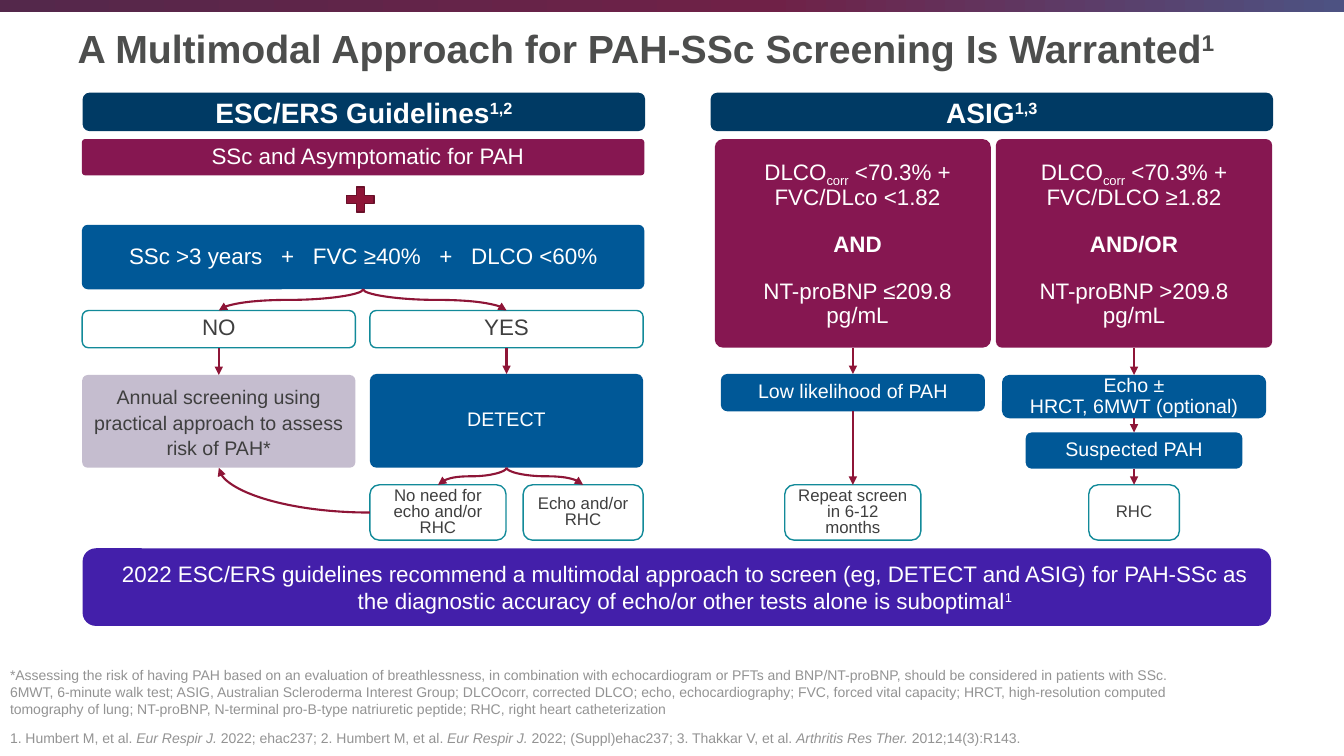
from copy import deepcopy

from lxml.etree import SubElement
from pptx import Presentation
from pptx.dml.color import RGBColor
from pptx.enum.shapes import MSO_CONNECTOR, MSO_SHAPE
from pptx.enum.text import MSO_ANCHOR, PP_ALIGN
from pptx.oxml.ns import qn
from pptx.util import Inches, Pt

WHITE = RGBColor(0xFF, 0xFF, 0xFF)
TITLE_GRAY = RGBColor(0x4D, 0x4E, 0x4D)
TEXT_GRAY = RGBColor(0x3F, 0x3F, 0x3F)
NOTE_GRAY = RGBColor(0x93, 0x93, 0x93)
NAVY = RGBColor(0x00, 0x3A, 0x64)
BLUE = RGBColor(0x00, 0x58, 0x97)
PLUM = RGBColor(0x86, 0x17, 0x51)
LILAC = RGBColor(0xC5, 0xBD, 0xCF)
VIOLET = RGBColor(0x43, 0x1F, 0xAA)
TEAL = RGBColor(0x12, 0x8A, 0x99)
CRIMSON = RGBColor(0x8E, 0x15, 0x37)
DARK_RED = RGBColor(0x69, 0x10, 0x29)
BAND = [(0, RGBColor(0x54, 0x28, 0x4B)), (0.57, RGBColor(0x6F, 0x21, 0x47)), (1, RGBColor(0x4D, 0x52, 0x82))]
SUPER, SUB, WIDE = {"baseline": "30000"}, {"baseline": "-25000"}, {"spc": "890"}
BOLD, ITALIC = {"b": "1"}, {"i": "1"}


class Sheet:
    font = "Arial"

    def __init__(self, deck):
        self.shapes = deck.slides.add_slide(deck.slide_layouts[6]).shapes
        self.column, self.row = deck.slide_width / 100, deck.slide_height / 100

    def cols(self, count):
        return round(count * self.column)

    def rows(self, count):
        return round(count * self.row)

    def frame(self, center, top, width, height):
        return self.cols(center - width / 2), self.rows(top), self.cols(width), self.rows(height)

    def put_text(self, frame, paragraphs, size, color, align=PP_ALIGN.CENTER, spacing=1.0, gap=0, indent=0):
        frame.word_wrap = True
        for index, runs in enumerate(paragraphs):
            paragraph = frame.add_paragraph() if index else frame.paragraphs[0]
            paragraph.alignment, paragraph.line_spacing = align, spacing
            paragraph.space_before = Pt(gap if index else 0)
            if indent:
                paragraph._p.get_or_add_pPr().set("marL", str(self.cols(indent)))
            for part in runs:
                text, extras = (part, {}) if isinstance(part, str) else part
                run = paragraph.add_run()
                run.text = text
                run.font.name, run.font.size = self.font, Pt(size)
                run.font.color.rgb = color
                for key, value in extras.items():
                    run._r.get_or_add_rPr().set(key, value)

    def preset(self, kind, place, fill=None, outline=None):
        shape = self.shapes.add_shape(kind, *self.frame(*place))
        shape.shadow.inherit = False
        if fill is None:
            shape.fill.background()
        else:
            shape.fill.solid()
            shape.fill.fore_color.rgb = fill
        if outline is None:
            shape.line.fill.background()
        else:
            shape.line.color.rgb = outline
            shape.line.width = Pt(1)
        return shape

    def box(self, place, paragraphs, size, fill=None, color=WHITE, corner=0.17, **style):
        shape = self.preset(MSO_SHAPE.ROUNDED_RECTANGLE, place, fill, TEAL if fill is None else None)
        shape.adjustments[0] = corner
        frame = shape.text_frame
        frame.vertical_anchor = MSO_ANCHOR.MIDDLE
        frame.margin_left = frame.margin_right = self.cols(0.75)
        frame.margin_top = frame.margin_bottom = self.rows(0.15)
        self.put_text(frame, paragraphs, size, color, **style)
        return shape

    def answer(self, place, text, size=12):
        return self.box(place, [[text]], size, color=TEXT_GRAY, spacing=0.8)

    def label(self, place, paragraphs, size, color, anchor):
        frame = self.shapes.add_textbox(*self.frame(*place)).text_frame
        frame.vertical_anchor = anchor
        self.put_text(frame, paragraphs, size, color, PP_ALIGN.LEFT)

    def band(self, place):
        shape = self.preset(MSO_SHAPE.RECTANGLE, place)
        shape.fill.gradient()
        shape.fill.gradient_angle = 0
        stops = shape._element.spPr.find(".//" + qn("a:gsLst"))
        stops.insert(1, deepcopy(stops[0]))
        for stop, (position, color) in zip(shape.fill.gradient_stops, BAND):
            stop.position, stop.color.rgb = position, color

    def arrow(self, source, target, kind=MSO_CONNECTOR.STRAIGHT, sides=(2, 0)):
        line = self.shapes.add_connector(kind, 0, 0, 0, 0)
        line.begin_connect(source, sides[0])
        line.end_connect(target, sides[1])
        line.line.color.rgb = CRIMSON
        line.line.width = Pt(1.5)
        properties = line._element.spPr
        SubElement(properties.find(qn("a:ln")), qn("a:tailEnd"), type="triangle")
        SubElement(properties, qn("a:effectLst"))
        return line

    def turn(self, line, degrees, flip="0"):
        xfrm = line._element.spPr.find(qn("a:xfrm"))
        for key, value in (("rot", str(degrees * 60000)), ("flipH", flip), ("flipV", "0")):
            xfrm.set(key, value)

    def branch(self, source, target):
        line = self.arrow(source, target, MSO_CONNECTOR.CURVE)
        rightward = line.end_x > line.begin_x
        across, down = line.width, line.height
        line.left += (across - down) // 2
        line.top += (down - across) // 2
        line.width, line.height = down, across
        self.turn(line, *((270, "1") if rightward else (90, "0")))

    def loop_back(self, source, target):
        line = self.arrow(source, target, MSO_CONNECTOR.CURVE, (1, 2))
        line._element.spPr.find(qn("a:prstGeom")).set("prst", "curvedConnector2")
        self.turn(line, 180)


def build_guidelines(sheet):
    middle, no_side, yes_side = 27.02, 16.28, 37.69
    sheet.box((middle, 18.4, 41.85, 4.8), [["SSc and Asymptomatic for PAH"]],
              16, PLUM, corner=0.09, spacing=0.9, indent=0.7)
    sheet.preset(MSO_SHAPE.MATH_PLUS, (26.81, 24.13, 2.78, 4.53), CRIMSON, DARK_RED)
    plus = [(" ", WIDE), "+", (" ", WIDE)]
    criteria = sheet.box((middle, 29.73, 41.85, 8.53), [["SSc >3 years", *plus, "FVC ≥40%", *plus, "DLCO <60%"]],
                         16, BLUE, corner=0.09, spacing=0.9)
    no = sheet.answer((no_side, 41.07, 20.33, 4.93), "NO", 16)
    yes = sheet.answer((yes_side, 41.07, 20.33, 4.93), "YES", 16)
    annual = sheet.box((no_side, 49.6, 20.33, 12.27),
                       [["Annual screening using practical approach to assess risk of PAH*"]],
                       14, LILAC, TEXT_GRAY, corner=0.06, spacing=Pt(18))
    detect = sheet.box((yes_side, 49.47, 20.33, 12.4), [["DETECT"]], 14, BLUE, corner=0.07, spacing=0.8)
    no_need = sheet.answer((32.59, 64.13, 10.13, 7.33), "No need for echo and/or RHC")
    echo = sheet.answer((43.39, 64.13, 8.93, 7.33), "Echo and/or RHC")
    for source, target in ((criteria, no), (criteria, yes), (detect, no_need), (detect, echo)):
        sheet.branch(source, target)
    sheet.arrow(no, annual)
    sheet.arrow(yes, detect)
    sheet.loop_back(no_need, annual)


def build_asig(sheet):
    low_side, high_side = 63.46, 84.38
    panels = [sheet.box((center, 18.4, 20.55, 27.6),
                        [["DLCO", ("corr", SUB), ratio], [(joint, BOLD)], [f"NT-proBNP {level}209.8 pg/mL"]],
                        16, PLUM, corner=corner, spacing=0.9, gap=16.5, indent=indent)
              for center, ratio, joint, level, corner, indent in (
                  (low_side, " <70.3% + FVC/DLco <1.82", "AND", "≤", 0.04, 0.7),
                  (high_side, " <70.3% + FVC/DLCO ≥1.82", "AND/OR", ">", 0.03, 0))]
    low, echo, suspected = [sheet.box(place, lines, 14, BLUE, spacing=0.9) for place, lines in (
        ((low_side, 49.47, 19.65, 4.93), [["Low likelihood of PAH"]]),
        ((high_side, 49.6, 19.65, 5.73), [["Echo ±"], ["HRCT, 6MWT (optional)"]]),
        ((high_side, 57.2, 16.13, 4.8), [["Suspected PAH"]]))]
    repeat = sheet.answer((low_side, 64.13, 10.13, 7.33), "Repeat screen in 6-12 months")
    rhc = sheet.answer((high_side, 64.13, 6.75, 7.33), "RHC")
    for chain in ((panels[0], low, repeat), (panels[1], echo, suspected, rhc)):
        for source, target in zip(chain, chain[1:]):
            sheet.arrow(source, target)


def main():
    deck = Presentation()
    deck.slide_width, deck.slide_height = Inches(13.33), Inches(7.5)
    sheet = Sheet(deck)
    sheet.band((50, 0, 100, 1.6))
    title = [("A Multimodal Approach for PAH-SSc Screening Is Warranted", BOLD), ("1", BOLD | SUPER)]
    sheet.label((49.1, 2.53, 88.13, 17.33), [title], 28, TITLE_GRAY, MSO_ANCHOR.TOP)
    for center, name, refs in ((27.08, "ESC/ERS Guidelines", "1,2"), (73.8, "ASIG", "1,3")):
        sheet.box((center, 12.27, 41.85, 5.07), [[(name, BOLD), (refs, BOLD | SUPER)]], 20, NAVY)
    build_guidelines(sheet)
    build_asig(sheet)
    advice = ("2022 ESC/ERS guidelines recommend a multimodal approach to screen (eg, DETECT and ASIG) for "
              "PAH-SSc as the diagnostic accuracy of echo/or other tests alone is suboptimal")
    sheet.box((50.36, 72.53, 88.43, 10.27), [[advice, ("1", SUPER)]], 16, VIOLET, indent=1.2)
    notes = [["*Assessing the risk of having PAH based on an evaluation of breathlessness, in combination with "
              "echocardiogram or PFTs and BNP/NT-proBNP, should be considered in patients with SSc."],
             ["6MWT, 6-minute walk test; ASIG, Australian Scleroderma Interest Group; DLCOcorr, corrected DLCO; "
              "echo, echocardiography; FVC, forced vital capacity; HRCT, high-resolution computed tomography of "
              "lung; NT-proBNP, N-terminal pro-B-type natriuretic peptide; RHC, right heart catheterization"]]
    references = ["1. Humbert M, et al. ", ("Eur Respir J. ", ITALIC), "2022; ehac237; 2. Humbert M, et al. ",
                  ("Eur Respir J. ", ITALIC), "2022; (Suppl)ehac237; 3. Thakkar V, et al. ",
                  ("Arthritis Res Ther. ", ITALIC), "2012;14(3):R143."]
    for top, height, lines in ((86.5, 9, notes), (95.4, 4, [references])):
        sheet.label((44.07, top, 88.13, height), lines, 10, NOTE_GRAY, MSO_ANCHOR.BOTTOM)
    deck.save("out.pptx")


if __name__ == "__main__":
    main()
